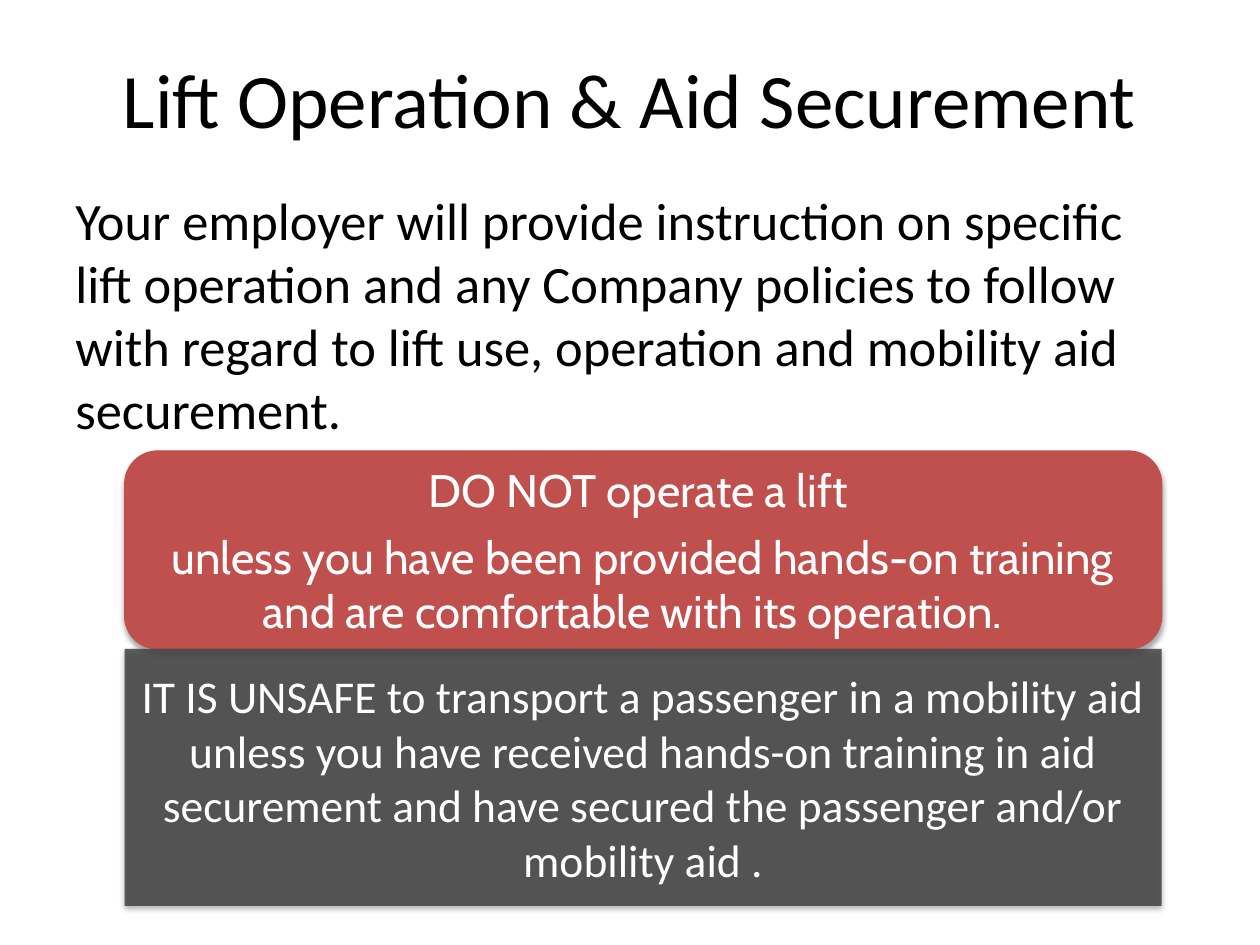
from dataclasses import dataclass
from typing import Optional

from lxml import etree
from pptx import Presentation
from pptx.dml.color import RGBColor
from pptx.enum import shapes, text
from pptx.oxml import ns
from pptx.util import Inches, Pt

BLACK = RGBColor(0x00, 0x00, 0x00)
WHITE = RGBColor(0xFF, 0xFF, 0xFF)
RED = RGBColor(0xC0, 0x50, 0x4D)
CHARCOAL = RGBColor(0x40, 0x40, 0x40)

WARNING_LEFT, WARNING_WIDTH = 0.99, 8.23


@dataclass(frozen=True)
class TextStyle:
    font: str
    size: float
    color: RGBColor
    align: text.PP_ALIGN = text.PP_ALIGN.CENTER
    anchor: text.MSO_ANCHOR = text.MSO_ANCHOR.MIDDLE
    space_before: float = 0


@dataclass(frozen=True)
class Warning:
    outline: shapes.MSO_SHAPE
    top: float
    height: float
    fill: RGBColor
    style: TextStyle
    lines: tuple[str, ...]
    border: Optional[RGBColor] = None
    opacity: int = 100


TITLE_STYLE = TextStyle("Calibri", 44, BLACK)
BODY_STYLE = TextStyle("Calibri", 30, BLACK, text.PP_ALIGN.LEFT, text.MSO_ANCHOR.TOP)

WARNINGS = (
    Warning(
        shapes.MSO_SHAPE.ROUNDED_RECTANGLE, 3.58, 1.57, RED,
        TextStyle("Cabin", 26, WHITE, space_before=7),
        ("DO NOT operate a lift ",
         "unless you have been provided hands-on training and are "
         "comfortable with its operation.  "),
        border=RED,
    ),
    Warning(
        shapes.MSO_SHAPE.RECTANGLE, 5.15, 2.04, CHARCOAL,
        TextStyle("Calibri", 26, WHITE, space_before=7),
        ("IT IS UNSAFE to transport a passenger in a mobility aid unless you "
         "have received hands-on training in aid securement and have secured "
         "the passenger and/or mobility aid .",),
        opacity=83,
    ),
)


def write_text(frame, lines: tuple[str, ...], style: TextStyle) -> None:
    frame.word_wrap = True
    frame.vertical_anchor = style.anchor
    for index, line in enumerate(lines):
        paragraph = frame.add_paragraph() if index else frame.paragraphs[0]
        paragraph.alignment = style.align
        paragraph.space_before = Pt(style.space_before)
        run = paragraph.add_run()
        run.text = line
        run.font.name = style.font
        run.font.size = Pt(style.size)
        run.font.color.rgb = style.color


def add_text(slide, top: float, height: float, line: str, style: TextStyle) -> None:
    box = slide.shapes.add_textbox(Inches(0.5), Inches(top), Inches(9), Inches(height))
    write_text(box.text_frame, (line,), style)


def set_opacity(color, percent: int) -> None:
    etree.SubElement(color, ns.qn("a:alpha"), val=str(percent * 1000))


def add_soft_shadow(shape) -> None:
    """Give the shape a faint shadow falling straight down."""
    shape.shadow.inherit = False
    effects = shape.element.spPr.find(ns.qn("a:effectLst"))
    shadow = etree.SubElement(
        effects, ns.qn("a:outerShdw"), blurRad=str(Pt(3.1)), dist=str(Pt(1.8)),
        dir="5400000", rotWithShape="0")
    color = etree.SubElement(shadow, ns.qn("a:srgbClr"), val=str(BLACK))
    set_opacity(color, 35)


def add_warning(slide, warning: Warning) -> None:
    shape = slide.shapes.add_shape(
        warning.outline, Inches(WARNING_LEFT), Inches(warning.top),
        Inches(WARNING_WIDTH), Inches(warning.height))
    shape.fill.solid()
    shape.fill.fore_color.rgb = warning.fill
    if warning.opacity < 100:
        set_opacity(shape.element.spPr.find(f".//{ns.qn('a:srgbClr')}"), warning.opacity)
    if warning.border is None:
        shape.line.fill.background()
    else:
        shape.line.color.rgb = warning.border
        shape.line.width = Pt(0.75)
    add_soft_shadow(shape)
    write_text(shape.text_frame, warning.lines, warning.style)


def main() -> None:
    deck = Presentation()
    deck.slide_width, deck.slide_height = Inches(10), Inches(7.5)
    slide = deck.slides.add_slide(deck.slide_layouts[6])
    add_text(slide, 0.3, 0.95, "Lift Operation & Aid Securement", TITLE_STYLE)
    add_text(
        slide, 1.44, 2.14,
        "Your employer will provide instruction on specific lift operation and any "
        "Company policies to follow with regard to lift use, operation and mobility "
        "aid securement.",
        BODY_STYLE)
    for warning in WARNINGS:
        add_warning(slide, warning)
    deck.save("out.pptx")


if __name__ == "__main__":
    main()
